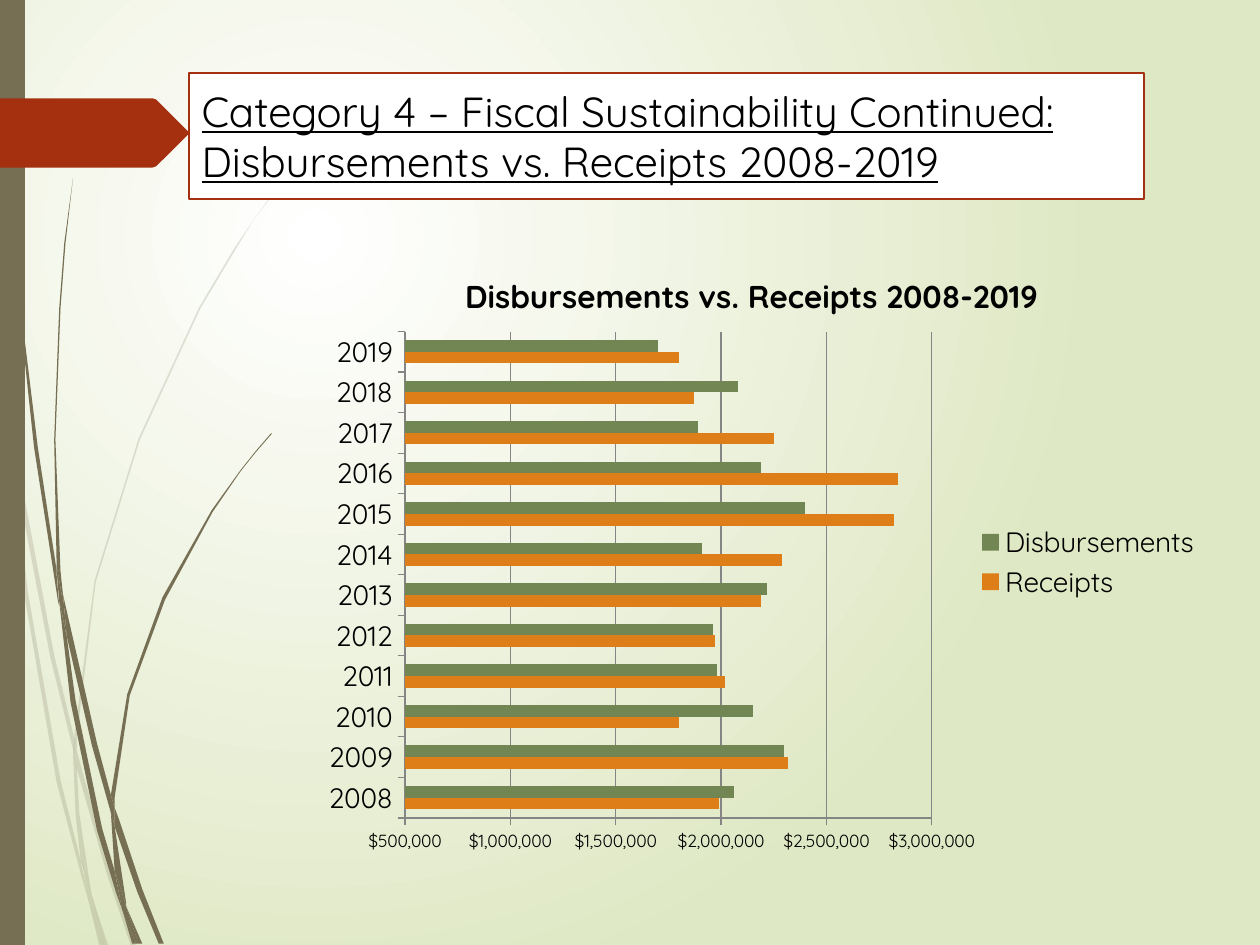
"""Build the slide comparing disbursements and receipts, 2008-2019."""
from dataclasses import dataclass
from typing import Any

from pptx import Presentation
from pptx import util as u
from pptx.chart import data as chart_data
from pptx.dml import color
from pptx.enum import chart as chart_enum
from pptx.enum import text
from pptx.oxml import parse_xml
from pptx.oxml import ns

BLACK, WHITE, OLIVE, RED, GRAY = "000000", "FFFFFF", "766F54", "A53010", "858585"

FAINT_GRASS = [
    [(8, 350), (6, 322), (0, 282), (0, 299), (7, 344)],
    [(40, 522), (59, 599), (59, 586), (43, 520), (10, 345), (12, 376)],
    [(64, 607), (61, 596), (61, 610), (85, 694), (104, 751), (108, 751), (88, 692)],
    [(83, 751), (86, 751), (73, 711)],
    [(64, 683), (48, 619), (22, 469), (12, 376), (8, 350), (19, 470), (45, 621),
     (64, 693), (70, 714), (69, 707)],
    [(58, 599), (60, 646), (64, 683), (67, 692), (73, 711), (72, 706), (63, 646),
     (61, 610), (61, 608)],
    [(61, 584), (76, 462), (111, 349), (159, 245), (187, 198), (201, 175), (217, 154),
     (217, 153), (201, 175), (186, 197), (158, 244), (110, 348), (75, 461), (59, 584),
     (59, 586), (61, 596)],
    [(70, 714), (79, 751), (82, 751)],
    [(61, 608), (61, 610), (61, 596), (59, 586), (58, 599)],
    [(67, 692), (65, 683), (69, 707), (70, 714), (82, 751), (83, 751), (73, 711)],
]
DARK_GRASS = [
    [(5, 110), (14, 233), (27, 355), (46, 477), (47, 481), (45, 457), (45, 453),
     (30, 355), (15, 232), (6, 109), (4, 48), (3, 0), (2, 0), (3, 48)],
    [(73, 592), (88, 645), (88, 633), (88, 631), (77, 590), (50, 472), (53, 505)],
    [(94, 649), (91, 641), (91, 656), (109, 708), (126, 749), (130, 749), (113, 706)],
    [(91, 691), (81, 657), (60, 556), (53, 505), (47, 477), (56, 557), (77, 659),
     (92, 708), (97, 722), (96, 717)],
    [(50, 472), (48, 453), (44, 349), (48, 245), (52, 193), (58, 141), (51, 193),
     (47, 245), (43, 349), (45, 449), (49, 472)],
    [(110, 749), (113, 749), (100, 719)],
    [(47, 477), (53, 505), (50, 472), (49, 472), (45, 449), (45, 453)],
    [(91, 633), (103, 552), (131, 476), (169, 406), (191, 374), (203, 359), (216, 344),
     (215, 344), (203, 358), (191, 373), (168, 405), (129, 474), (101, 551), (88, 631),
     (91, 641)],
    [(97, 722), (105, 749), (108, 749)],
    [(88, 645), (91, 691), (96, 706), (100, 719), (100, 716), (91, 656), (90, 651)],
    [(88, 645), (90, 651), (91, 656), (91, 641), (88, 631), (88, 633)],
    [(96, 706), (91, 691), (96, 717), (97, 722), (108, 749), (110, 749), (100, 719)],
]
LEFT_BAND = [(0, 0), (20, 0), (20, 750), (0, 750)]
ARROW_TAB = [(0, 78), (121, 78), (124, 79), (149, 104), (149, 107), (124, 132),
             (121, 133), (0, 133)]
YEARS = [str(year) for year in range(2008, 2020)]
SERIES = {
    "Receipts": ("DE7E18", [1990000, 2320000, 1800000, 2020000, 1970000, 2190000,
                            2290000, 2820000, 2840000, 2250000, 1870000, 1800000]),
    "Disbursements": ("728653", [2060000, 2300000, 2150000, 1980000, 1960000, 2220000,
                                 1910000, 2400000, 2190000, 1890000, 2080000, 1700000]),
}


def rgb(value):
    """Turn a hex string into a colour."""
    return color.RGBColor.from_string(value)


@dataclass
class SlideBuilder:
    """Hold the style and the current slide."""
    slide: Any
    font: str = "Quicksand"

    def style(self, font, size, bold=False):
        """Apply the common text style."""
        font.name, font.size, font.bold = self.font, u.Pt(size), bold
        font.color.rgb = rgb(BLACK)

    def line(self, line, value, width):
        """Set the colour and width of a line."""
        line.color.rgb = rgb(value)
        line.width = u.Pt(width)

    def background(self, center, edge):
        """Fill the background with a radial gradient."""
        fill = self.slide.background.fill
        fill.gradient()
        for stop, value, position in zip(fill.gradient_stops, (center, edge), (0, 1)):
            stop.color.rgb = rgb(value)
            stop.position = position
        linear = self.slide.element.find(".//" + ns.qn("a:lin"))
        linear.getparent().replace(linear, parse_xml(
            f'<a:path {ns.nsdecls("a")} path="circle"><a:fillToRect l="50000" '
            't="50000" r="100000" b="100000"/></a:path>'))

    def outline(self, points, value, opacity=100):
        """Draw a filled outline from points in hundredths of an inch."""
        builder = self.slide.shapes.build_freeform(*points[0], scale=u.Cm(2.54) / 100)
        builder.add_line_segments(points[1:], close=True)
        shape = builder.convert_to_shape()
        shape.shadow.inherit = False
        shape.fill.solid()
        shape.fill.fore_color.rgb = rgb(value)
        shape.line.fill.background()
        if opacity < 100:
            fill_color = shape.element.spPr.find(".//" + ns.qn("a:srgbClr"))
            fill_color.append(parse_xml(
                f'<a:alpha {ns.nsdecls("a")} val="{opacity * 1000}"/>'))

    def title(self, lines, left, top, width, height):
        """Place the underlined title in a framed box."""
        shape = self.slide.shapes.title
        shape.left, shape.top = u.Cm(left), u.Cm(top)
        shape.width, shape.height = u.Cm(width), u.Cm(height)
        shape.fill.solid()
        shape.fill.fore_color.rgb = rgb(WHITE)
        self.line(shape.line, RED, 1.25)
        frame = shape.text_frame
        frame.word_wrap = True
        frame.auto_size = text.MSO_AUTO_SIZE.NONE
        frame.vertical_anchor = text.MSO_ANCHOR.MIDDLE
        paragraph = frame.paragraphs[0]
        paragraph.alignment = text.PP_ALIGN.LEFT
        for index, words in enumerate(lines):
            if index:
                paragraph.add_line_break()
            run = paragraph.add_run()
            run.text = words
            self.style(run.font, 24)
            run.font.underline = True
        self.slide.shapes._spTree.append(shape.element)

    def layout(self, parent, index, inner=False, **places):
        """Give a chart part a manual position."""
        for old in parent.findall(ns.qn("c:layout")):
            parent.remove(old)
        target = '<c:layoutTarget val="inner"/>' if inner else ""
        modes = "".join(f'<c:{name}Mode val="edge"/>' for name in "xy")
        values = "".join(f'<c:{name} val="{value}"/>' for name, value in places.items())
        parent.insert(index, parse_xml(
            f'<c:layout {ns.nsdecls("c")}><c:manualLayout>{target}{modes}{values}'
            '</c:manualLayout></c:layout>'))

    def axis(self, axis, size):
        """Format an axis."""
        self.style(axis.tick_labels.font, size)
        self.line(axis.format.line, GRAY, 0.75)
        axis.major_tick_mark = chart_enum.XL_TICK_MARK.OUTSIDE

    def bar_chart(self, heading, left, top, width, height):
        """Add the clustered bar chart."""
        values = chart_data.CategoryChartData(number_format='"$"#,##0')
        values.categories = YEARS
        for name, (_, amounts) in SERIES.items():
            values.add_series(name, amounts)
        chart = self.slide.shapes.add_chart(
            chart_enum.XL_CHART_TYPE.BAR_CLUSTERED, u.Cm(left), u.Cm(top),
            u.Cm(width), u.Cm(height), values).chart
        self.style(chart.font, 10)
        run = chart.chart_title.text_frame.paragraphs[0].add_run()
        run.text = heading
        self.style(run.font, 18, bold=True)
        chart.chart_title.include_in_layout = False
        self.layout(chart.chart_title._element, 1, x=0.17, y=0.04)
        plot = chart.plots[0]
        plot.gap_width = 150
        plot.vary_by_categories = False
        self.layout(plot._element.getparent(), 0, inner=True,
                    x=0.11, y=0.14, w=0.58, h=0.76)
        for series in plot.series:
            series.format.fill.solid()
            series.format.fill.fore_color.rgb = rgb(SERIES[series.name][0])
        self.axis(chart.category_axis, 16)
        axis = chart.value_axis
        self.axis(axis, 10)
        axis.minimum_scale, axis.maximum_scale = 500000, 3000000
        axis.major_unit = 500000
        axis.tick_labels.number_format = '"$"#,##0'
        axis.tick_labels.number_format_is_linked = False
        self.line(axis.major_gridlines.format.line, GRAY, 0.75)
        chart.has_legend = True
        chart.legend.position = chart_enum.XL_LEGEND_POSITION.RIGHT
        chart.legend.include_in_layout = False
        self.style(chart.legend.font, 16)


def main():
    """Build and save the presentation."""
    presentation = Presentation()
    presentation.slide_width, presentation.slide_height = u.Cm(25.4), u.Cm(19.05)
    builder = SlideBuilder(presentation.slides.add_slide(presentation.slide_layouts[5]))
    builder.background(WHITE, "DFE8C4")
    for blade in FAINT_GRASS:
        builder.outline(blade, OLIVE, opacity=20)
    for blade in DARK_GRASS + [LEFT_BAND]:
        builder.outline(blade, OLIVE)
    builder.outline(ARROW_TAB, RED)
    heading = "Disbursements vs. Receipts 2008-2019"
    builder.title(["Category 4 – Fiscal Sustainability Continued:", heading],
                  3.81, 1.47, 19.25, 2.54)
    builder.bar_chart(heading, 6.15, 4.88, 18.31, 12.9)
    presentation.save("out.pptx")


if __name__ == "__main__":
    main()
